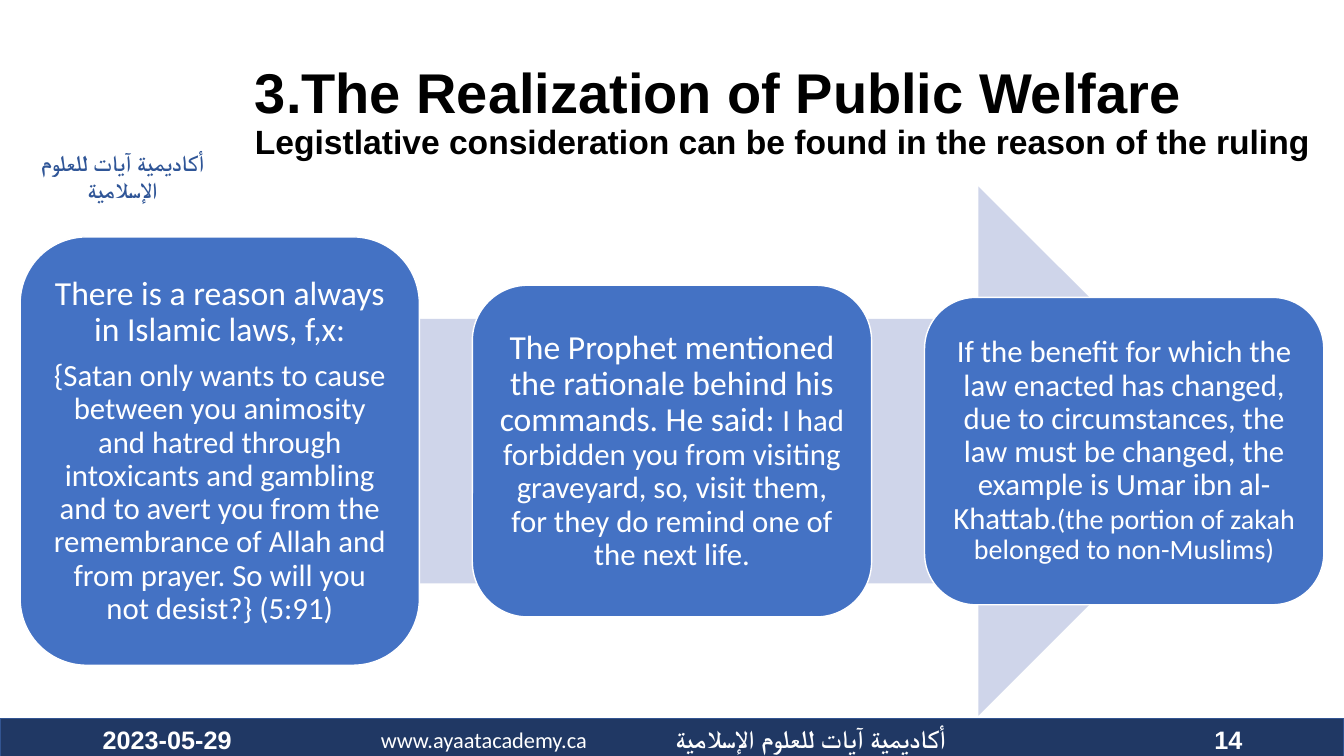
from pptx import Presentation
from pptx import util as u
from pptx.dml.color import RGBColor
from pptx.enum import shapes, text

MID = text.MSO_ANCHOR.MIDDLE
LEFT, CENTER, RIGHT = text.PP_ALIGN.LEFT, text.PP_ALIGN.CENTER, text.PP_ALIGN.RIGHT
KIND = shapes.MSO_SHAPE


def color(hex):
    return RGBColor.from_string(hex)


def write(frame, paras, font="Calibri", ink="FFFFFF", bold=False, align=LEFT,
          anchor=MID, inset=None, line=None, after=None, rtl=False):
    """Each paragraph is a list of (words, size) runs; "\\n" breaks the line."""
    frame.word_wrap = True
    frame.vertical_anchor = anchor
    if inset is not None:
        frame.margin_left = frame.margin_right = u.Inches(inset)
        frame.margin_top = frame.margin_bottom = u.Inches(inset)
    for i, runs in enumerate(paras):
        para = frame.add_paragraph() if i else frame.paragraphs[0]
        para.alignment = align
        if rtl:
            para._p.get_or_add_pPr().set("rtl", "1")
        if line:
            para.line_spacing = line
        if after:
            para.space_after = u.Pt(after)
        for words, size in runs:
            if words == "\n":
                para.add_line_break()
                continue
            run = para.add_run()
            run.text = words
            run.font.name, run.font.size = font, u.Pt(size)
            run.font.bold = bold
            run.font.color.rgb = color(ink)


class Deck:
    navy, edge, blue, pale, white = "203864", "325491", "4472C4", "CFD5EA", "FFFFFF"

    def __init__(self):
        self.prs = Presentation()
        self.prs.slide_width = u.Inches(13.33)
        self.prs.slide_height = u.Inches(7.5)
        self.slide = self.prs.slides.add_slide(self.prs.slide_layouts[6])

    def shape(self, kind, at, fill, line=None):
        item = self.slide.shapes.add_shape(kind, *map(u.Inches, at))
        item.shadow.inherit = False
        item.fill.solid()
        item.fill.fore_color.rgb = color(fill)
        if line:
            item.line.color.rgb = color(line)
            item.line.width = u.Pt(1)
        else:
            item.line.fill.background()
        return item

    def label(self, at, paras, **style):
        box = self.slide.shapes.add_textbox(*map(u.Inches, at))
        write(box.text_frame, paras, **style)

    def card(self, left, mid, high, paras):
        item = self.shape(KIND.ROUNDED_RECTANGLE, (left, mid - high / 2, 3.96, high),
                          self.blue, self.white)
        write(item.text_frame, paras, align=CENTER, inset=0.1, line=0.9, after=8)


def main():
    deck = Deck()
    name = "أكاديمية آيات للعلوم الإسلامية"

    # Footer bar and academy name
    deck.shape(KIND.RECTANGLE, (0, 7.13, 13.33, 0.4), deck.navy, deck.edge)
    deck.label((6.04, 7.13, 4, 0.4), [[(name, 18)]], bold=True, align=CENTER, rtl=True)
    deck.label((3.3, 7.14, 3, 0.4), [[("www.ayaatacademy.ca", 16)]], align=CENTER)
    deck.label((0, 1.43, 2.43, 0.37), [[(name, 16)]], ink="2F5597", bold=True,
               align=CENTER, anchor=text.MSO_ANCHOR.TOP)

    # Title
    deck.label((2.43, 0.4, 10.81, 1.45), [[
        ("3.The Realization of Public Welfare", 40), ("\n", 40),
        ("Legistlative consideration can be found in the reason of the ruling", 24),
    ]], font="Arial", ink="000000", bold=True, line=0.9)

    # Arrow with three cards, all on one centre line
    top, high = 1.85, 5.25
    deck.shape(KIND.RIGHT_ARROW, (1, top, 11.33, high), deck.pale)
    cards = [
        (4.25, [
            [("There is a reason always in Islamic laws, f,x:", 24)],
            [("{Satan only wants to cause between you animosity and hatred through "
              "intoxicants and gambling and to avert you from the remembrance of Allah "
              "and from prayer. So will you not desist?} (5:91)", 22)]]),
        (3.29, [[
            ("The Prophet mentioned the rationale behind his commands. He said: ", 24),
            ("I had forbidden you from visiting graveyard, so, visit them, for they do "
             "remind one of the next life.", 22)]]),
        (3.05, [[
            ("If the benefit for which the law enacted has changed, due to circumstances, "
             "the law must be changed, the example is Umar ibn al-Khattab", 22),
            (".(the portion of zakah belonged to non-Muslims)", 20)]]),
    ]
    for i, (tall, paras) in enumerate(cards):
        deck.card(0.2 + 4.485 * i, top + high / 2, tall, paras)

    # Date and slide number
    for left, words, align in ((0.92, "2023-05-29", LEFT), (9.42, "14", RIGHT)):
        deck.label((left, 7.14, 3, 0.4), [[(words, 18)]], font="Arial", bold=True,
                   align=align)

    deck.prs.save("out.pptx")


if __name__ == "__main__":
    main()
